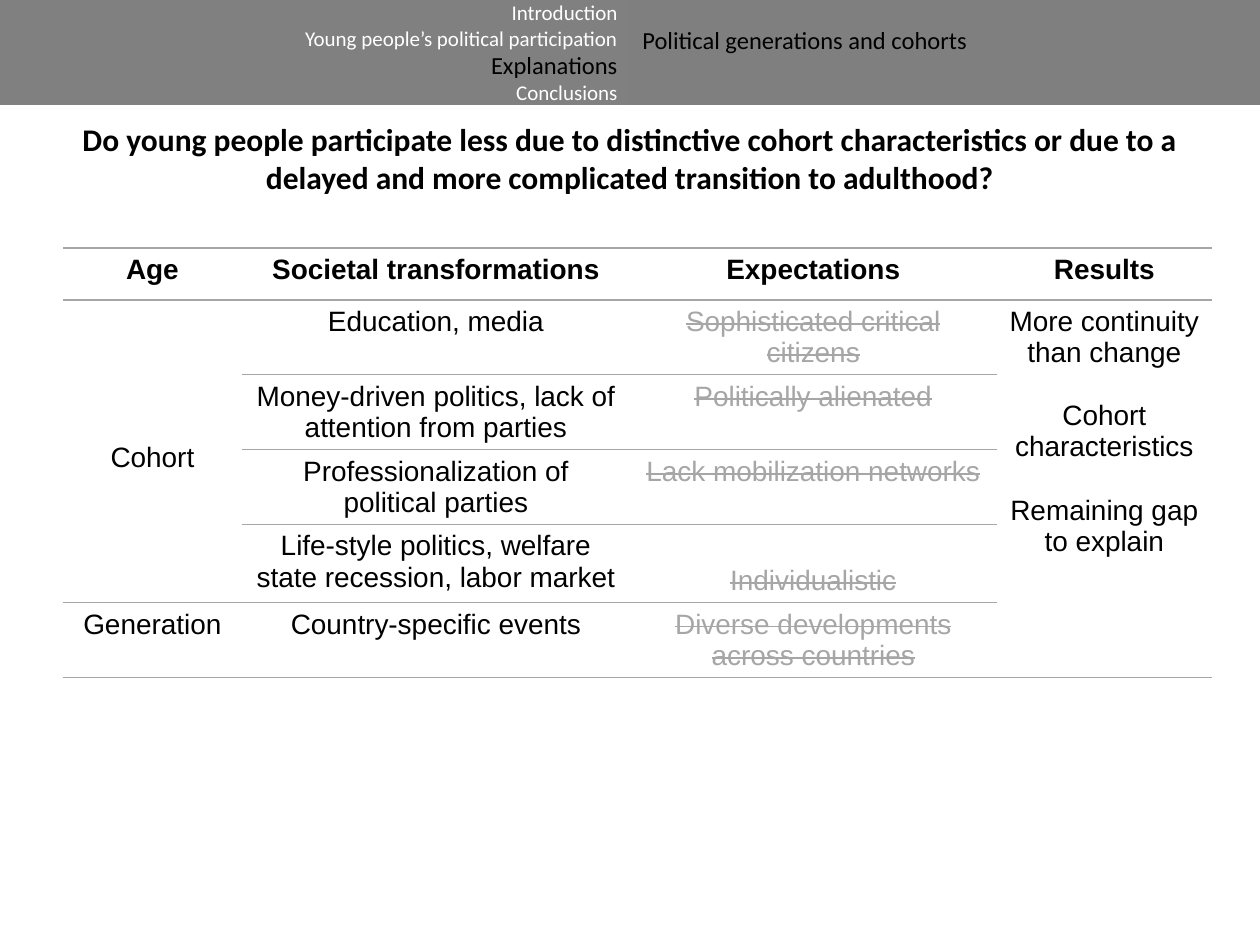
from dataclasses import dataclass

from lxml import etree
from pptx import Presentation
from pptx import util as u
from pptx.dml.color import RGBColor
from pptx.enum import shapes, text
from pptx.oxml.ns import qn


@dataclass(frozen=True)
class Theme:
    """Colours, fonts and type sizes of the slide."""
    ink: str = "000000"
    paper: str = "FFFFFF"
    muted: str = "A6A6A6"
    outline_band: str = "808080"
    topic_band: str = "7F7F7F"
    heading_font: str = "Calibri"
    table_font: str = "Arial"
    title_size: int = 18
    table_size: int = 16
    current_size: int = 14
    section_size: int = 12
    rule_width: float = 1


THEME = Theme()
LEFT, CENTER, RIGHT = (text.PP_ALIGN.LEFT, text.PP_ALIGN.CENTER, text.PP_ALIGN.RIGHT)
MIDDLE, BOTTOM = text.MSO_ANCHOR.MIDDLE, text.MSO_ANCHOR.BOTTOM

TITLE = ("Do young people participate less due to distinctive cohort characteristics "
         "or due to a delayed and more complicated transition to adulthood?")
SECTIONS = ["Introduction", "Young people’s political participation",
            "Explanations", "Conclusions"]
CURRENT_SECTION = "Explanations"
TOPIC = "Political generations and cohorts"

COLUMN_WIDTHS = [1.42, 3.08, 2.91, 1.71]
ROW_HEIGHTS = [0.41, 0.59, 0.59, 0.59, 0.62, 0.59]
AGE, EXPECTATIONS, RESULTS = 0, 2, 3
HEADER, FIRST_COHORT, LAST_COHORT, GENERATION = 0, 1, 4, 5
ROWS = [
    ["Age", "Societal transformations", "Expectations", "Results"],
    ["Cohort", "Education, media", "Sophisticated critical citizens",
     "More continuity than change\nCohort characteristics\nRemaining gap to explain"],
    ["", "Money-driven politics, lack of attention from parties",
     "Politically alienated", ""],
    ["", "Professionalization of political parties", "Lack mobilization networks", ""],
    ["", "Life-style politics, welfare state recession, labor market",
     "Individualistic", ""],
    ["Generation", "Country-specific events", "Diverse developments across countries", ""],
]


def add_run(paragraph, words, font, size, color, bold=False, strike=False):
    """Append one formatted run to a paragraph."""
    run = paragraph.add_run()
    run.text = words
    run.font.name, run.font.size, run.font.bold = font, u.Pt(size), bold
    run.font.color.rgb = RGBColor.from_string(color)
    if strike:
        run.font._element.set("strike", "sngStrike")


def paragraphs_for(frame, lines, alignment):
    """Yield an aligned paragraph with each line of text."""
    for index, line in enumerate(lines):
        paragraph = frame.add_paragraph() if index else frame.paragraphs[0]
        paragraph.alignment = alignment
        yield paragraph, line


def add_band(slide, box, fill, lines, alignment):
    """Draw one navigation band with its lines of text."""
    band = slide.shapes.add_shape(shapes.MSO_SHAPE.RECTANGLE, *box)
    band.shadow.inherit = False
    band.fill.solid()
    band.fill.fore_color.rgb = RGBColor.from_string(fill)
    band.line.fill.background()
    frame = band.text_frame
    frame.word_wrap, frame.vertical_anchor = True, MIDDLE
    for paragraph, line in paragraphs_for(frame, lines, alignment):
        current = line in (CURRENT_SECTION, TOPIC)
        add_run(paragraph, line, THEME.heading_font,
                THEME.current_size if current else THEME.section_size,
                THEME.ink if current else THEME.paper)
    return band


def add_navigation(slide, box):
    """Split the top strip into the section outline and the current topic."""
    left, top, width, height = box
    half = width // 2
    add_band(slide, (left, top, half, height), THEME.outline_band, SECTIONS, RIGHT)
    topic = add_band(slide, (left + half, top, half, height),
                     THEME.topic_band, [TOPIC], LEFT)
    topic.text_frame.margin_bottom = u.Inches(0.25)


def fill_title(slide, box):
    """Place the question in the title placeholder."""
    title = slide.shapes.title
    title.left, title.top, title.width, title.height = box
    frame = title.text_frame
    frame.word_wrap, frame.vertical_anchor = True, MIDDLE
    frame.auto_size = text.MSO_AUTO_SIZE.NONE
    for paragraph, line in paragraphs_for(frame, [TITLE], CENTER):
        add_run(paragraph, line, THEME.heading_font, THEME.title_size, THEME.ink, bold=True)


def rule_cell(cell, top, bottom):
    """Rule the chosen horizontal edges of a cell and clear its fill."""
    properties = cell._tc.get_or_add_tcPr()
    for edge, ruled in (("L", False), ("R", False), ("T", top), ("B", bottom)):
        line = etree.SubElement(properties, qn(f"a:ln{edge}"), w=str(u.Pt(THEME.rule_width)))
        if ruled:
            fill = etree.SubElement(line, qn("a:solidFill"))
            etree.SubElement(fill, qn("a:srgbClr"), val=THEME.muted)
        else:
            etree.SubElement(line, qn("a:noFill"))
    cell.fill.background()


def add_findings(slide, box):
    """Build the table of expectations and results by age group."""
    table = slide.shapes.add_table(len(ROWS), len(COLUMN_WIDTHS), *box).table
    table.horz_banding = False
    left, top, width, height = box
    for column, share in zip(table.columns, COLUMN_WIDTHS):
        column.width = int(width * share / sum(COLUMN_WIDTHS))
    for row, share in zip(table.rows, ROW_HEIGHTS):
        row.height = int(height * share / sum(ROW_HEIGHTS))
    cohort = table.cell(FIRST_COHORT, AGE)
    cohort.merge(table.cell(LAST_COHORT, AGE))
    table.cell(FIRST_COHORT, RESULTS).merge(table.cell(GENERATION, RESULTS))
    for r, row in enumerate(ROWS):
        for c, content in enumerate(row):
            cell = table.cell(r, c)
            rule_cell(cell, not cell.is_spanned, not cell.is_spanned or r == GENERATION)
            if cell.is_spanned:
                continue
            rejected = c == EXPECTATIONS and r != HEADER
            lines = content.split("\n")
            for paragraph, line in paragraphs_for(cell.text_frame, lines, CENTER):
                if line != lines[0]:
                    paragraph.space_before = u.Pt(18.4)
                add_run(paragraph, line, THEME.table_font, THEME.table_size,
                        THEME.muted if rejected else THEME.ink,
                        bold=r == HEADER, strike=rejected)
    cohort.vertical_anchor = MIDDLE
    cohort.margin_top = u.Inches(0.15)
    table.cell(LAST_COHORT, EXPECTATIONS).vertical_anchor = BOTTOM


def main():
    """Assemble the slide and save it."""
    presentation = Presentation()
    presentation.slide_width, presentation.slide_height = u.Inches(10), u.Inches(7.5)
    width, height = presentation.slide_width, presentation.slide_height
    slide = presentation.slides.add_slide(presentation.slide_layouts[5])
    strip = height // 9
    margin = width // 20
    fill_title(slide, (margin, strip, width - 2 * margin, strip))
    add_findings(slide, (margin, u.Inches(1.97), u.Inches(sum(COLUMN_WIDTHS)),
                         u.Inches(sum(ROW_HEIGHTS))))
    add_navigation(slide, (0, 0, width, strip))
    presentation.save("out.pptx")


if __name__ == "__main__":
    main()
